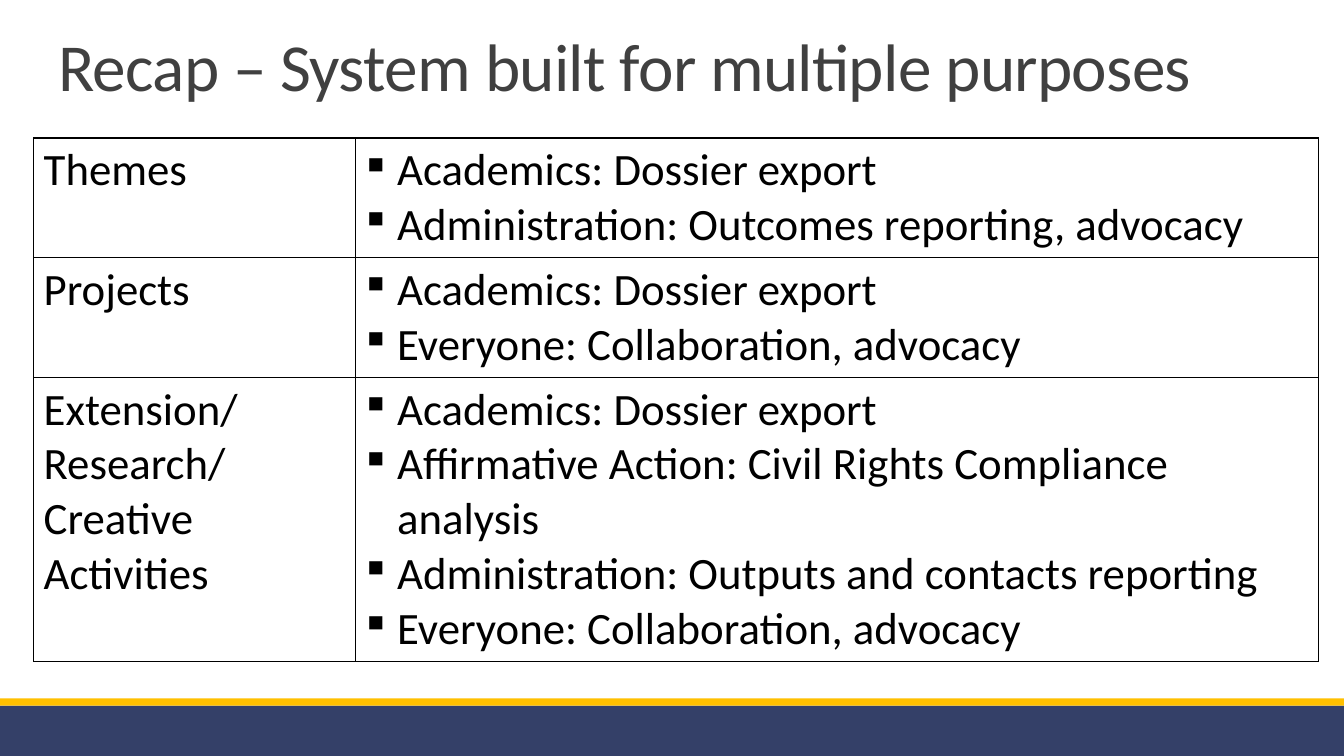
from lxml import etree
from pptx import Presentation
from pptx.dml.color import RGBColor
from pptx.enum import shapes, text
from pptx.oxml import ns
from pptx.util import Pt

NAVY = RGBColor(0x34, 0x40, 0x68)
GOLD = RGBColor(0xFF, 0xC0, 0x00)
GREY = RGBColor(0x40, 0x40, 0x40)
BLACK = RGBColor(0, 0, 0)
WIDE, HIGH = 960, 540
HEAD = {"name": "Calibri", "size": Pt(48), "bold": False}
BODY = {"name": "Calibri", "size": Pt(32), "bold": False}
COLS = [230, 688]
ROWS = [
    (85, "Themes", ["Academics: Dossier export",
                    "Administration: Outcomes reporting, advocacy"]),
    (85, "Projects", ["Academics: Dossier export",
                      "Everyone: Collaboration, advocacy"]),
    (202, "Extension/ Research/ Creative Activities",
     ["Academics: Dossier export",
      "Affirmative Action: Civil Rights Compliance analysis",
      "Administration: Outputs and contacts reporting",
      "Everyone: Collaboration, advocacy"]),
]


def assign(item, form):
    """Set each attribute of an item from a dict."""
    for key, value in form.items():
        setattr(item, key, value)


def sub(parent, tag, **attrs):
    """Add a DrawingML child element."""
    return etree.SubElement(parent, ns.qn(tag), attrs)


def write(para, words, form, color):
    """Add one formatted run to a paragraph."""
    run = para.add_run()
    run.text = words
    assign(run.font, form)
    run.font.color.rgb = color
    return run


def bullet(para):
    """Give a paragraph a square bullet and a hanging indent."""
    props = para._p.get_or_add_pPr()
    props.set("marL", str(Pt(22.5)))
    props.set("indent", str(-Pt(22.5)))
    sub(props, "a:buFont", typeface="Wingdings")
    sub(props, "a:buChar", char="§")


def border(cell):
    """Draw a thin black line on every side of a cell."""
    props = cell._tc.get_or_add_tcPr()
    for side in ("lnL", "lnR", "lnT", "lnB"):
        line = sub(props, f"a:{side}", w=str(Pt(1)))
        sub(sub(line, "a:solidFill"), "a:srgbClr", val=str(BLACK))


def fill(cell, lines, marked):
    """Write lines into a bordered, clear cell."""
    border(cell)
    cell.fill.background()
    frame = cell.text_frame
    for i, words in enumerate(lines):
        para = frame.add_paragraph() if i else frame.paragraphs[0]
        if marked:
            bullet(para)
        write(para, words, BODY, BLACK)


def grid(slide):
    """Build the table of themes and their uses."""
    high = sum(row[0] for row in ROWS)
    table = slide.shapes.add_table(len(ROWS), len(COLS), Pt(24), Pt(98.6),
                                   Pt(sum(COLS)), Pt(high)).table
    assign(table, {"first_row": False, "horz_banding": False})
    for col, width in zip(table.columns, COLS):
        col.width = Pt(width)
    for row, (tall, name, uses) in zip(table.rows, ROWS):
        row.height = Pt(tall)
        fill(row.cells[0], [name], False)
        fill(row.cells[1], uses, True)


def band(slide, top, tall, color):
    """Draw a full-width strip."""
    strip = slide.shapes.add_shape(shapes.MSO_SHAPE.RECTANGLE, 0, Pt(top),
                                   Pt(WIDE), Pt(tall))
    strip.shadow.inherit = False
    strip.fill.solid()
    strip.fill.fore_color.rgb = color
    strip.line.fill.background()


def title(slide, words):
    """Write the slide heading."""
    box = slide.shapes.add_textbox(Pt(34.6), Pt(22.5), Pt(891), Pt(114.5))
    assign(box.text_frame, {"word_wrap": True,
                            "vertical_anchor": text.MSO_ANCHOR.TOP})
    para = box.text_frame.paragraphs[0]
    para.line_spacing = 0.85
    run = write(para, words, HEAD, GREY)
    run._r.get_or_add_rPr().set("spc", "-50")


def main():
    """Build and save the slide."""
    deck = Presentation()
    assign(deck, {"slide_width": Pt(WIDE), "slide_height": Pt(HIGH)})
    slide = deck.slides.add_slide(deck.slide_layouts[6])
    band(slide, 504, 36, NAVY)
    band(slide, 498.8, 5.2, GOLD)
    grid(slide)
    title(slide, "Recap – System built for multiple purposes")
    deck.save("out.pptx")


if __name__ == "__main__":
    main()
